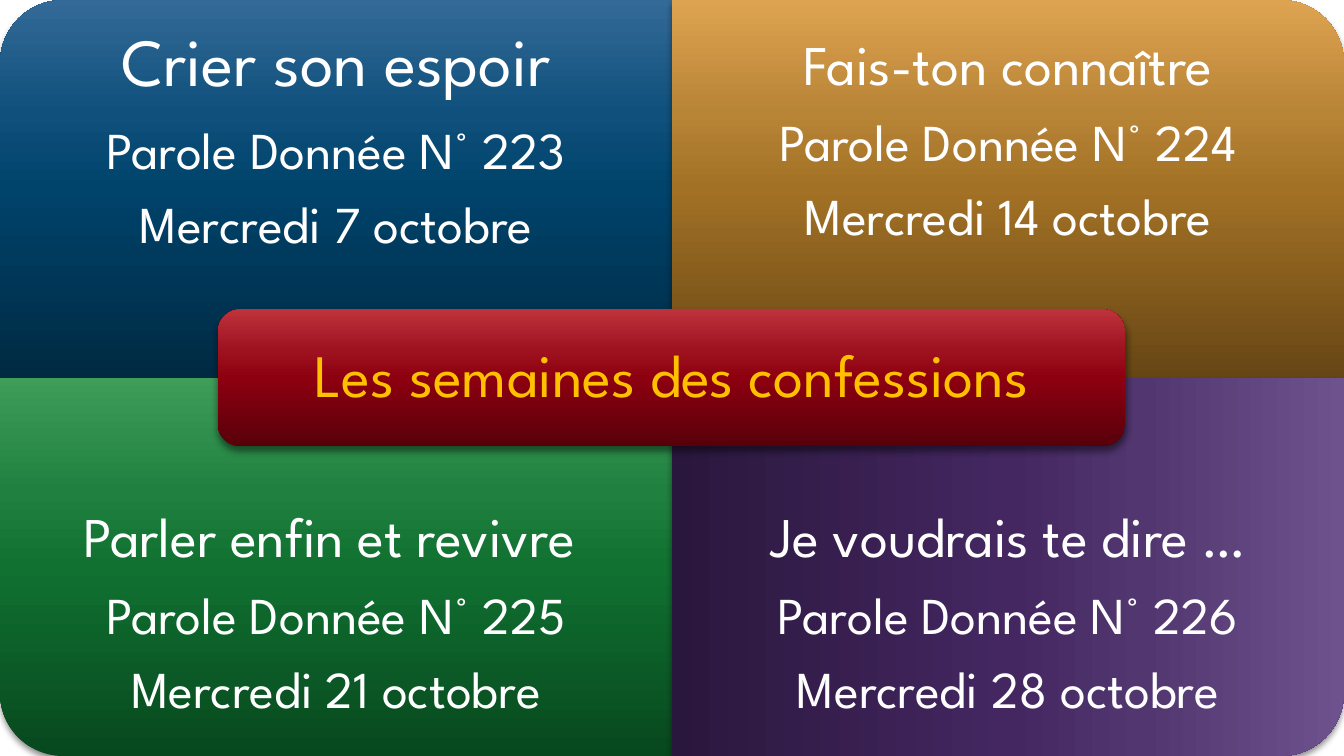
from dataclasses import dataclass

from lxml.etree import SubElement
from pptx import Presentation
from pptx.dml.color import RGBColor
from pptx.enum.shapes import MSO_SHAPE as Preset
from pptx.enum.text import MSO_ANCHOR as Anchor, PP_ALIGN as Align
from pptx.oxml import parse_xml
from pptx.oxml.ns import nsdecls, qn
from pptx.slide import Slide
from pptx.util import Inches, Pt


@dataclass(frozen=True)
class Theme:
    font: str = "League Spartan"
    white: str = "FFFFFF"
    gold: str = "FFC000"
    shadow: str = "000000"
    blue: tuple[str, ...] = ("002A42", "00436B", "0F507C", "346A97")
    ochre: tuple[str, ...] = ("674615", "A27125", "B88436", "DDA350")
    green: tuple[str, ...] = ("08481E", "107131", "20803F", "3F9D5A")
    purple: tuple[str, ...] = ("2A173D", "442761", "523670", "6E528D")
    red: tuple[str, ...] = ("58000A", "8D0010", "9E111F", "BE323C")
    stops: tuple[int, ...] = (0, 50, 70, 100)
    lead_size: int = 48
    title_size: int = 40
    body_size: int = 37
    banner_size: int = 43


@dataclass(frozen=True)
class Area:
    left: float
    top: float
    width: float
    height: float


@dataclass(frozen=True)
class Week:
    column: int
    row: int
    rotation: int
    shades: tuple[str, ...]
    title: str
    number: int
    date: str
    title_size: int = Theme.title_size
    inset: float = 0.31
    turn_fill: bool = False


THEME = Theme()
PAGE_WIDTH, PAGE_HEIGHT = 13.33, 7.5
PANEL_WIDTH, PANEL_HEIGHT = PAGE_WIDTH / 2, PAGE_HEIGHT / 2
TEXT_HEIGHT = PANEL_HEIGHT * 0.75
BANNER = Area(2.16, 3.07, 9, 1.36)
BANNER_MARGIN = 0.07

WEEKS = [
    Week(0, 0, 270, THEME.blue, "Crier son espoir", 223, "Mercredi 7 octobre",
         title_size=THEME.lead_size, inset=0.37),
    Week(1, 0, 0, THEME.ochre, "Fais-ton connaître", 224, "Mercredi 14 octobre"),
    Week(0, 1, 180, THEME.green, "Parler enfin et revivre ", 225, "Mercredi 21 octobre"),
    Week(1, 1, 90, THEME.purple, "Je voudrais te dire …", 226, "Mercredi 28 octobre",
         turn_fill=True),
]


def add_panel(page: Slide, preset: Preset, area: Area, shades: tuple[str, ...],
              rotation: int = 0, turn_fill: bool = False) -> None:
    sideways = rotation % 180 == 90
    width, height = (area.height, area.width) if sideways else (area.width, area.height)
    left = area.left + (area.width - width) / 2
    top = area.top + (area.height - height) / 2
    panel = page.shapes.add_shape(preset, Inches(left), Inches(top), Inches(width), Inches(height))
    panel.rotation = rotation
    panel.line.fill.background()
    panel.shadow.inherit = False
    properties = panel._element.spPr
    stops = "".join(
        f'<a:gs pos="{stop * 1000}"><a:srgbClr val="{shade}"/></a:gs>'
        for stop, shade in zip(THEME.stops, shades)
    )
    properties.find(qn("a:ln")).addprevious(parse_xml(
        f'<a:gradFill {nsdecls("a")} rotWithShape="{int(turn_fill)}"><a:gsLst>{stops}</a:gsLst>'
        '<a:lin ang="16200000" scaled="0"/></a:gradFill>'
    ))
    properties.find(qn("a:effectLst")).append(parse_xml(
        f'<a:outerShdw {nsdecls("a")} blurRad="{Pt(5)}" dist="{Pt(3)}" dir="5400000"'
        f' algn="ctr" rotWithShape="0"><a:srgbClr val="{THEME.shadow}">'
        '<a:alpha val="45000"/></a:srgbClr></a:outerShdw>'
    ))


def add_text(page: Slide, area: Area, lines: list[tuple[str, int]], *,
             color: str, inset: float) -> None:
    box = page.shapes.add_textbox(
        Inches(area.left), Inches(area.top), Inches(area.width), Inches(area.height)
    )
    frame = box.text_frame
    frame.word_wrap = True
    frame.vertical_anchor = Anchor.MIDDLE
    frame.margin_left = frame.margin_right = Inches(inset)
    frame.margin_top = frame.margin_bottom = Inches(inset)
    for index, (text, size) in enumerate(lines):
        para = frame.add_paragraph() if index else frame.paragraphs[0]
        para.alignment = Align.CENTER
        para.line_spacing = 0.9
        space_after = SubElement(para._p.get_or_add_pPr(), qn("a:spcAft"))
        SubElement(space_after, qn("a:spcPct"), val="35000")
        span = para.add_run()
        span.text = text
        span.font.name = THEME.font
        span.font.size = Pt(size)
        span.font.color.rgb = RGBColor.from_string(color)


def add_week(page: Slide, week: Week) -> None:
    left, top = week.column * PANEL_WIDTH, week.row * PANEL_HEIGHT
    text_top = week.row * (PAGE_HEIGHT - TEXT_HEIGHT)
    add_panel(page, Preset.ROUND_1_RECTANGLE, Area(left, top, PANEL_WIDTH, PANEL_HEIGHT),
              week.shades, week.rotation, week.turn_fill)
    lines = [
        (week.title, week.title_size),
        (f"Parole Donnée N° {week.number}", THEME.body_size),
        (week.date, THEME.body_size),
    ]
    add_text(page, Area(left, text_top, PANEL_WIDTH, TEXT_HEIGHT), lines,
             color=THEME.white, inset=week.inset)


def add_banner(page: Slide) -> None:
    add_panel(page, Preset.ROUNDED_RECTANGLE, BANNER, THEME.red)
    inner = Area(BANNER.left + BANNER_MARGIN, BANNER.top + BANNER_MARGIN,
                 BANNER.width - 2 * BANNER_MARGIN, BANNER.height - 2 * BANNER_MARGIN)
    add_text(page, inner, [("Les semaines des confessions", THEME.banner_size)],
             color=THEME.gold, inset=0.18)


def main() -> None:
    deck = Presentation()
    deck.slide_width, deck.slide_height = Inches(PAGE_WIDTH), Inches(PAGE_HEIGHT)
    page = deck.slides.add_slide(deck.slide_layouts[6])
    for week in WEEKS:
        add_week(page, week)
    add_banner(page)
    deck.save("out.pptx")


if __name__ == "__main__":
    main()
